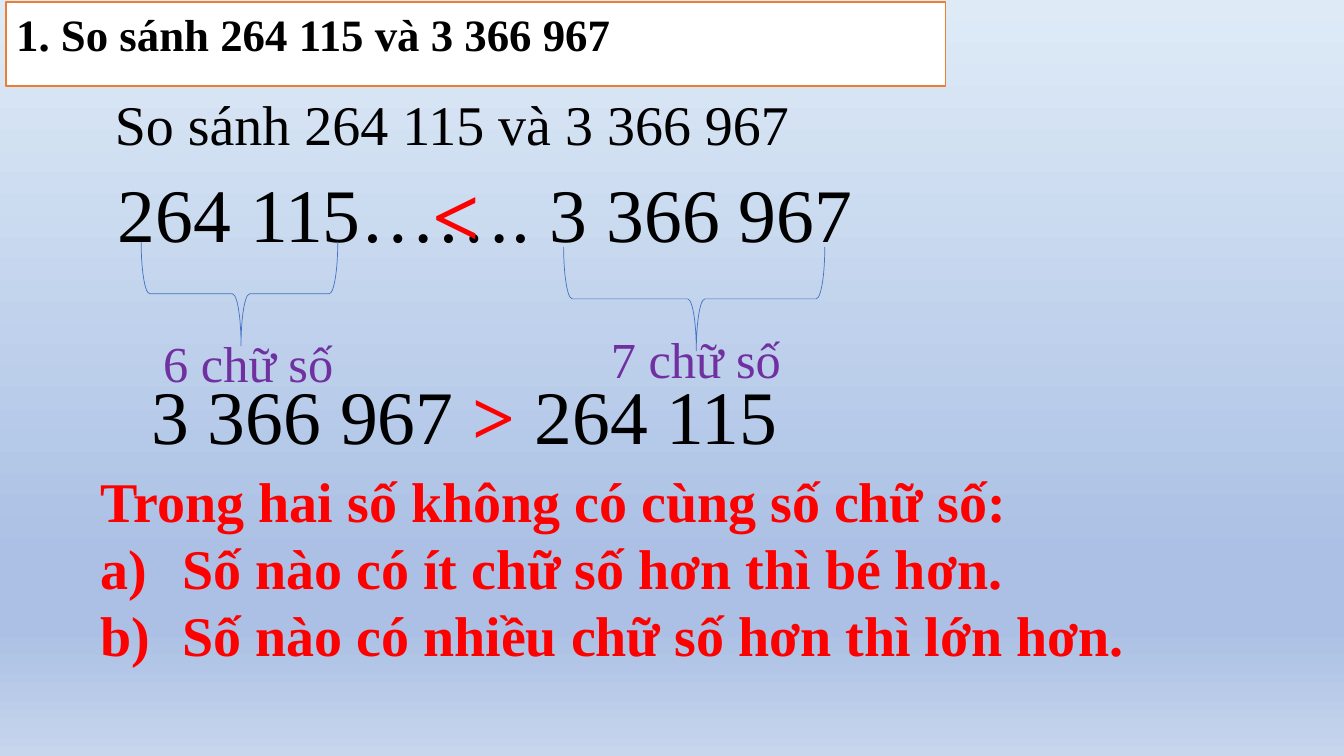
from dataclasses import dataclass

from lxml.etree import SubElement
from pptx import Presentation
from pptx.dml.color import RGBColor
from pptx.enum.shapes import MSO_SHAPE
from pptx.enum.text import MSO_ANCHOR, MSO_AUTO_SIZE, PP_ALIGN
from pptx.oxml.ns import qn
from pptx.util import Inches, Pt


@dataclass(frozen=True)
class Theme:
    font: str = "Times New Roman"
    black: str = "000000"
    white: str = "FFFFFF"
    red: str = "FF0000"
    purple: str = "7030A0"
    orange: str = "ED7D31"
    blue: str = "4472C4"
    background: tuple = ((0, "DEEBF7"), (74, "ABC0E4"), (83, "ABC0E4"), (100, "C7D5ED"))
    heading_size: int = 32
    label_size: int = 36
    body_size: int = 40
    number_size: int = 54
    sign_size: int = 60


class LessonSlide:
    def __init__(self, presentation, theme):
        self.theme = theme
        self.slide = presentation.slides.add_slide(presentation.slide_layouts[5])

    def paint_background(self):
        fill = self.slide.background.fill
        fill.gradient()
        fill.gradient_angle = 270
        background = self.slide.element.find(".//" + qn("p:bgPr"))
        stops = background.find(".//" + qn("a:gsLst"))
        for stop in list(stops):
            stops.remove(stop)
        for position, color in self.theme.background:
            stop = SubElement(stops, qn("a:gs"), pos=str(position * 1000))
            SubElement(stop, qn("a:srgbClr"), val=color)

    def add_run(self, paragraph, text, size, color, bold=False):
        run = paragraph.add_run()
        run.text = text
        run.font.name = self.theme.font
        run.font.size = Pt(size)
        run.font.bold = bold
        run.font.color.rgb = RGBColor.from_string(color)

    def title(self, text, left, top, width, height):
        shape = self.slide.shapes.title
        shape.left, shape.top = Inches(left), Inches(top)
        shape.width, shape.height = Inches(width), Inches(height)
        shape.fill.solid()
        shape.fill.fore_color.rgb = RGBColor.from_string(self.theme.white)
        shape.line.color.rgb = RGBColor.from_string(self.theme.orange)
        shape.line.width = Pt(1)
        frame = shape.text_frame
        frame.auto_size = MSO_AUTO_SIZE.SHAPE_TO_FIT_TEXT
        frame.vertical_anchor = MSO_ANCHOR.TOP
        paragraph = frame.paragraphs[0]
        paragraph.alignment = PP_ALIGN.LEFT
        self.add_run(paragraph, text, self.theme.heading_size, self.theme.black, True)

    def text_box(self, left, top, width, height):
        shape = self.slide.shapes.add_textbox(
            Inches(left), Inches(top), Inches(width), Inches(height))
        frame = shape.text_frame
        frame.word_wrap = True
        frame.auto_size = MSO_AUTO_SIZE.SHAPE_TO_FIT_TEXT
        return frame

    def text(self, runs, size, left, top, width, height):
        paragraph = self.text_box(left, top, width, height).paragraphs[0]
        for content, color, bold in runs:
            self.add_run(paragraph, content, size, color, bold)

    def brace(self, left, top, width, height):
        shape = self.slide.shapes.add_shape(
            MSO_SHAPE.LEFT_BRACE, Inches(left), Inches(top), Inches(width), Inches(height))
        shape.rotation = 270
        shape.adjustments[0], shape.adjustments[1] = 0.083, 0.508
        shape.shadow.inherit = False
        shape.fill.background()
        shape.line.color.rgb = RGBColor.from_string(self.theme.blue)
        shape.line.width = Pt(0.5)

    def rule(self, heading, cases, left, top, width, height):
        frame = self.text_box(left, top, width, height)
        for index, content in enumerate([heading, *cases]):
            paragraph = frame.add_paragraph() if index else frame.paragraphs[0]
            paragraph.alignment = PP_ALIGN.JUSTIFY
            if index:
                properties = paragraph._p.get_or_add_pPr()
                indent = Inches(0.81)
                properties.set("marL", str(indent))
                properties.set("indent", str(-indent))
                SubElement(properties, qn("a:buFont"), typeface=self.theme.font)
                SubElement(properties, qn("a:buAutoNum"), type="alphaLcParenR")
            self.add_run(paragraph, content, self.theme.body_size, self.theme.red, True)


def main():
    presentation = Presentation()
    presentation.slide_width, presentation.slide_height = Inches(13.33), Inches(7.5)
    theme = Theme()
    lesson = LessonSlide(presentation, theme)
    lesson.paint_background()

    # Heading and question
    question = "So sánh 264 115 và 3 366 967"
    lesson.title("1. " + question, 0.06, 0.02, 9.32, 0.64)
    lesson.text([(question, theme.black, False)], theme.body_size, 1.04, 0.84, 8.45, 0.77)
    lesson.text([("264 115……. 3 366 967", theme.black, False)],
                theme.number_size, 1.07, 1.61, 7.97, 1.01)

    # Digit counts under each number
    lesson.brace(1.86, 1.94, 1.03, 1.95)
    lesson.brace(6.37, 1.67, 1.03, 2.59)
    for label, left, top in (("6 chữ số", 1.52, 3.25), ("7 chữ số", 5.96, 3.21)):
        lesson.text([(label, theme.purple, False)], theme.label_size, left, top, 2.22, 0.71)

    # Answers
    lesson.text([("<", theme.red, True)], theme.sign_size, 4.19, 1.56, 1.05, 1.11)
    lesson.text([("3 366 967 ", theme.black, False), (">", theme.red, True),
                 (" 264 115", theme.black, False)],
                theme.number_size, 1.4, 3.61, 7.2, 1.01)

    # Rule
    lesson.rule("Trong hai số không có cùng số chữ số:",
                ["Số nào có ít chữ số hơn thì bé hơn.",
                 "Số nào có nhiều chữ số hơn thì lớn hơn."],
                0.9, 4.58, 11.45, 2.12)

    presentation.save("out.pptx")


if __name__ == "__main__":
    main()
